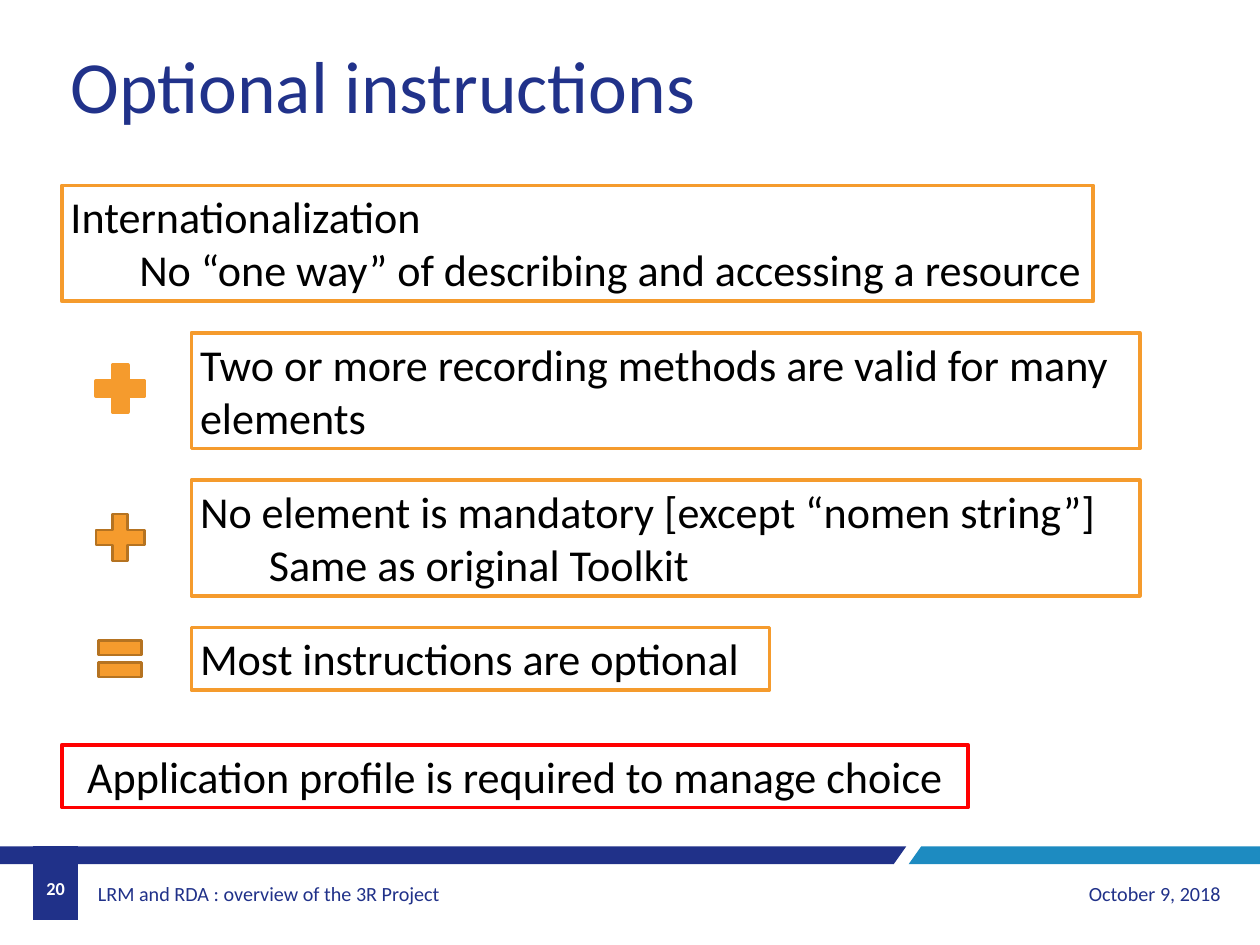
import pptx
import pptx.util
import pptx.dml.color
import pptx.enum.shapes
import pptx.enum.text

Cm = pptx.util.Cm
Pt = pptx.util.Pt
RGBColor = pptx.dml.color.RGBColor
MSO_SHAPE = pptx.enum.shapes.MSO_SHAPE
PP_ALIGN = pptx.enum.text.PP_ALIGN
MSO_ANCHOR = pptx.enum.text.MSO_ANCHOR

NAVY = RGBColor(0x20, 0x31, 0x89)
TITLE_BLUE = RGBColor(0x21, 0x32, 0x8A)
BLUE = RGBColor(0x1D, 0x8B, 0xC1)
ORANGE = RGBColor(0xF5, 0x9B, 0x2D)
BROWN = RGBColor(0xB5, 0x73, 0x21)
RED = RGBColor(0xFF, 0x00, 0x00)
BLACK = RGBColor(0x00, 0x00, 0x00)
WHITE = RGBColor(0xFF, 0xFF, 0xFF)

presentation = pptx.Presentation()
presentation.slide_width = Cm(36.27)
presentation.slide_height = Cm(27.2)
slide = presentation.slides.add_slide(presentation.slide_layouts[6])


def write_text(shape, lines, size, color, align=PP_ALIGN.LEFT,
               anchor=MSO_ANCHOR.TOP, bold=False, wrap=True):
    """Fill a shape with lines; every line after the first is indented."""
    frame = shape.text_frame
    frame.word_wrap = wrap
    frame.vertical_anchor = anchor
    for index, line in enumerate(lines):
        paragraph = frame.paragraphs[0] if index == 0 else frame.add_paragraph()
        paragraph.alignment = align
        if index:
            paragraph._p.get_or_add_pPr().set("marL", str(Cm(1.98)))
        run = paragraph.add_run()
        run.text = line
        run.font.name = "Calibri"
        run.font.size = Pt(size)
        run.font.bold = bold
        run.font.color.rgb = color


def add_outlined(kind, left, top, width, height, line_color, line_width):
    shape = slide.shapes.add_shape(kind, Cm(left), Cm(top), Cm(width), Cm(height))
    shape.shadow.inherit = False
    shape.fill.background()
    shape.line.color.rgb = line_color
    shape.line.width = Pt(line_width)
    return shape


# Footer band and page number block
BAND_TOP, BAND_BOTTOM = 24.36, 24.87
footer_shapes = [
    ([(26.09, BAND_TOP), (0, BAND_TOP), (0, BAND_BOTTOM), (25.73, BAND_BOTTOM)], NAVY),
    ([(36.27, BAND_TOP), (26.52, BAND_TOP), (26.16, BAND_BOTTOM), (36.27, BAND_BOTTOM)], BLUE),
    ([(0.94, 26.49), (2.26, 26.49), (2.26, BAND_TOP), (0.94, BAND_TOP)], NAVY),
]
for corners, color in footer_shapes:
    points = [(Cm(x), Cm(y)) for x, y in corners]
    builder = slide.shapes.build_freeform(*points[0])
    builder.add_line_segments(points[1:], close=True)
    band = builder.convert_to_shape()
    band.shadow.inherit = False
    band.fill.solid()
    band.fill.fore_color.rgb = color
    band.line.fill.background()

# Footer texts
footer_texts = [
    ("LRM and RDA : overview of the 3R Project", 2.64, 25.02, 14.02, 0.18,
     16.4, NAVY, PP_ALIGN.LEFT, False),
    ("October 9, 2018", 26.09, 25.02, 9.3, 0.25, 16.4, NAVY, PP_ALIGN.RIGHT, False),
    ("20", 0.94, 24.87, 1.32, 0.25, 14.9, WHITE, PP_ALIGN.CENTER, True),
]
for text, left, top, width, inset, size, color, align, bold in footer_texts:
    box = slide.shapes.add_textbox(Cm(left), Cm(top), Cm(width), Cm(1.4))
    box.text_frame.margin_left = box.text_frame.margin_right = Cm(inset)
    write_text(box, [text], size, color, align, MSO_ANCHOR.MIDDLE, bold)

# Title
title = slide.shapes.add_textbox(Cm(1.78), Cm(1.02), Cm(18.69), Cm(2.82))
write_text(title, ["Optional instructions"], 60, TITLE_BLUE, wrap=False)

# Statement boxes, stepping down at an equal pitch
statements = [
    (1.78, 29.69, 3.33, ["Internationalization",
                         "No “one way” of describing and accessing a resource"]),
    (5.51, 27.3, 3.33, ["Two or more recording methods are valid for many elements"]),
    (5.51, 27.3, 3.33, ["No element is mandatory [except “nomen string”]",
                        "Same as original Toolkit"]),
    (5.51, 16.64, 1.8, ["Most instructions are optional"]),
]
for row, (left, width, height, lines) in enumerate(statements):
    box = add_outlined(MSO_SHAPE.RECTANGLE, left, 5.34 + 4.24 * row,
                       width, height, ORANGE, 3)
    write_text(box, lines, 36, BLACK)

# Conclusion box
conclusion = add_outlined(MSO_SHAPE.RECTANGLE, 1.78, 21.44, 26.09, 1.8, RED, 3)
write_text(conclusion, ["Application profile is required to manage choice"], 36, BLACK,
           PP_ALIGN.CENTER, wrap=False)

# Plus and equal signs
signs = [
    (MSO_SHAPE.MATH_PLUS, 2.51, 10.26, 1.9, 1.85, ORANGE, 3),
    (MSO_SHAPE.MATH_PLUS, 2.51, 14.55, 1.9, 1.85, BROWN, 2),
    (MSO_SHAPE.MATH_EQUAL, 2.62, 18.06, 1.68, 1.8, BROWN, 2),
]
for sign_settings in signs:
    sign = add_outlined(*sign_settings)
    sign.fill.solid()
    sign.fill.fore_color.rgb = ORANGE

presentation.save("out.pptx")
